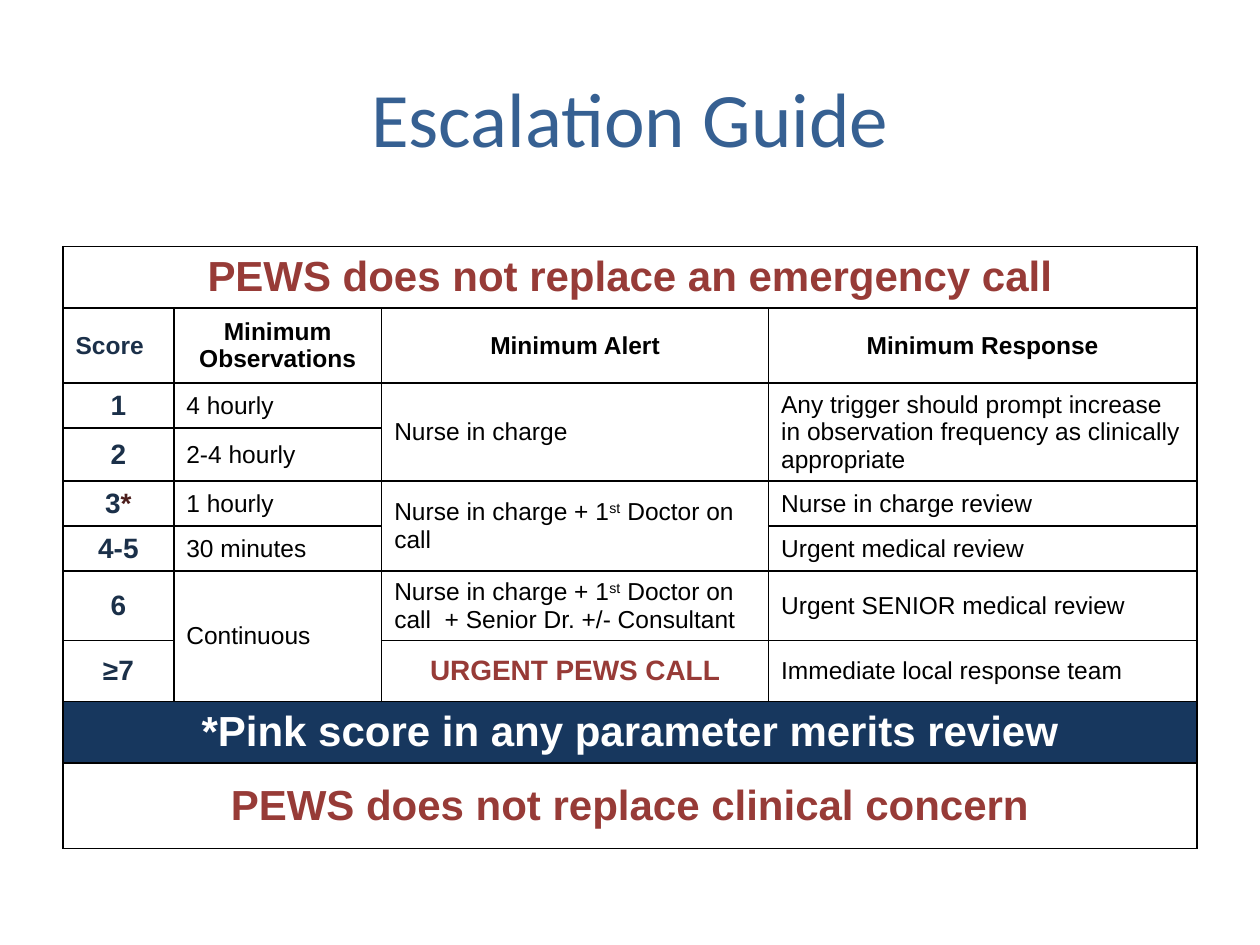
import pptx
import pptx.dml.color
import pptx.enum.text
import pptx.oxml
import pptx.oxml.ns
import pptx.util
from lxml import etree

Pt = pptx.util.Pt
ALIGN = pptx.enum.text.PP_ALIGN
MIDDLE = pptx.enum.text.MSO_ANCHOR.MIDDLE

COLOURS = {
    "title": "366092",
    "alarm": "973B37",
    "score": "1B3049",
    "pink_mark": "4C1D1B",
    "text": "000000",
    "white": "FFFFFF",
    "navy": "17375E",
}

COLUMN_WIDTHS = [63.3, 118.8, 221.1, 244.8]
ROW_HEIGHTS = [34.9, 43.1, 25.7, 30.3, 25.7, 25.7, 39.7, 34.9, 35.1, 48.9]

# Kind of cell: size, colour, bold, alignment, fill
STYLES = {
    "warning": (24, "alarm", True, ALIGN.CENTER, None),
    "banner": (24, "white", True, ALIGN.CENTER, "navy"),
    "score_heading": (14, "score", True, ALIGN.LEFT, "white"),
    "heading": (14, "text", True, ALIGN.CENTER, "white"),
    "score": (16, "score", True, ALIGN.CENTER, "white"),
    "urgent": (16, "alarm", True, ALIGN.CENTER, "white"),
    "body": (14, "text", False, ALIGN.LEFT, "white"),
}

FIRST_DOCTOR = ["Nurse in charge + 1", ("st", "super")]

# Row, column, kind, runs, rows spanned, columns spanned
CELLS = [
    (0, 0, "warning", ["PEWS does not replace an emergency call"], 1, 4),
    (1, 0, "score_heading", ["Score"], 1, 1),
    (1, 1, "heading", ["Minimum Observations"], 1, 1),
    (1, 2, "heading", ["Minimum Alert"], 1, 1),
    (1, 3, "heading", ["Minimum Response"], 1, 1),
    (2, 0, "score", ["1"], 1, 1),
    (3, 0, "score", ["2"], 1, 1),
    (4, 0, "score", ["3", ("*", "pink_mark")], 1, 1),
    (5, 0, "score", ["4-5"], 1, 1),
    (6, 0, "score", ["6"], 1, 1),
    (7, 0, "score", ["≥7"], 1, 1),
    (2, 1, "body", ["4 hourly"], 1, 1),
    (3, 1, "body", ["2-4 hourly"], 1, 1),
    (4, 1, "body", ["1 hourly"], 1, 1),
    (5, 1, "body", ["30 minutes"], 1, 1),
    (6, 1, "body", ["Continuous"], 2, 1),
    (2, 2, "body", ["Nurse in charge"], 2, 1),
    (4, 2, "body", FIRST_DOCTOR + [" Doctor on call"], 2, 1),
    (6, 2, "body", FIRST_DOCTOR + [" Doctor on call  + Senior Dr. +/- Consultant"], 1, 1),
    (7, 2, "urgent", ["URGENT PEWS CALL"], 1, 1),
    (2, 3, "body", ["Any trigger should prompt increase in observation "
                    "frequency as clinically appropriate"], 2, 1),
    (4, 3, "body", ["Nurse in charge review"], 1, 1),
    (5, 3, "body", ["Urgent medical review"], 1, 1),
    (6, 3, "body", ["Urgent SENIOR medical review"], 1, 1),
    (7, 3, "body", ["Immediate local response team"], 1, 1),
    (8, 0, "banner", ["*Pink score in any parameter merits review"], 1, 4),
    (9, 0, "warning", ["PEWS does not replace clinical concern"], 1, 4),
]


def rgb(name):
    return pptx.dml.color.RGBColor.from_string(COLOURS[name])


def add_run(paragraph, text, font_name, size, colour, bold=False):
    run = paragraph.add_run()
    run.text = text
    run.font.name = font_name
    run.font.size = Pt(size)
    run.font.bold = bold
    run.font.color.rgb = rgb(colour)
    return run


def add_title(slide, text):
    title = slide.shapes.title
    title.left, title.top, title.width, title.height = Pt(36), Pt(21.6), Pt(648), Pt(90)
    title.text_frame.vertical_anchor = MIDDLE
    paragraph = title.text_frame.paragraphs[0]
    paragraph.alignment = ALIGN.CENTER
    add_run(paragraph, text, "Calibri", 44, "title")


def set_borders(cell):
    """Draw thin lines on all sides; call before the fill is set, as XML order matters."""
    properties = cell._tc.get_or_add_tcPr()
    qn = pptx.oxml.ns.qn
    for side in ("a:lnL", "a:lnR", "a:lnT", "a:lnB"):
        line = etree.SubElement(properties, qn(side), w=str(Pt(1)))
        solid = etree.SubElement(line, qn("a:solidFill"))
        etree.SubElement(solid, qn("a:srgbClr"), val=COLOURS["text"])


def fill_cell(cell, kind, runs):
    size, colour, bold, alignment, fill = STYLES[kind]
    if fill:
        cell.fill.solid()
        cell.fill.fore_color.rgb = rgb(fill)
    cell.vertical_anchor = MIDDLE
    paragraph = cell.text_frame.paragraphs[0]
    paragraph.alignment = alignment
    for part in runs:
        text, mark = (part, None) if isinstance(part, str) else part
        run_colour = mark if mark in COLOURS else colour
        run = add_run(paragraph, text, "Arial", size, run_colour, bold)
        if mark == "super":
            run.font._element.set("baseline", "30000")


def add_escalation_table(slide):
    frame = slide.shapes.add_table(
        len(ROW_HEIGHTS), len(COLUMN_WIDTHS), Pt(36), Pt(141),
        Pt(sum(COLUMN_WIDTHS)), Pt(sum(ROW_HEIGHTS)))
    table = frame.table
    table.first_row = table.horz_banding = False
    for column, width in zip(table.columns, COLUMN_WIDTHS):
        column.width = Pt(width)
    for row, height in zip(table.rows, ROW_HEIGHTS):
        row.height = Pt(height)
    for cell in table.iter_cells():
        set_borders(cell)
        cell.fill.background()
    for row, column, kind, runs, row_span, column_span in CELLS:
        cell = table.cell(row, column)
        if row_span * column_span > 1:
            cell.merge(table.cell(row + row_span - 1, column + column_span - 1))
        fill_cell(cell, kind, runs)


def main():
    presentation = pptx.Presentation()
    presentation.slide_width, presentation.slide_height = Pt(720), Pt(540)
    slide = presentation.slides.add_slide(presentation.slide_layouts[5])
    add_title(slide, "Escalation Guide")
    add_escalation_table(slide)
    presentation.save("out.pptx")


if __name__ == "__main__":
    main()
